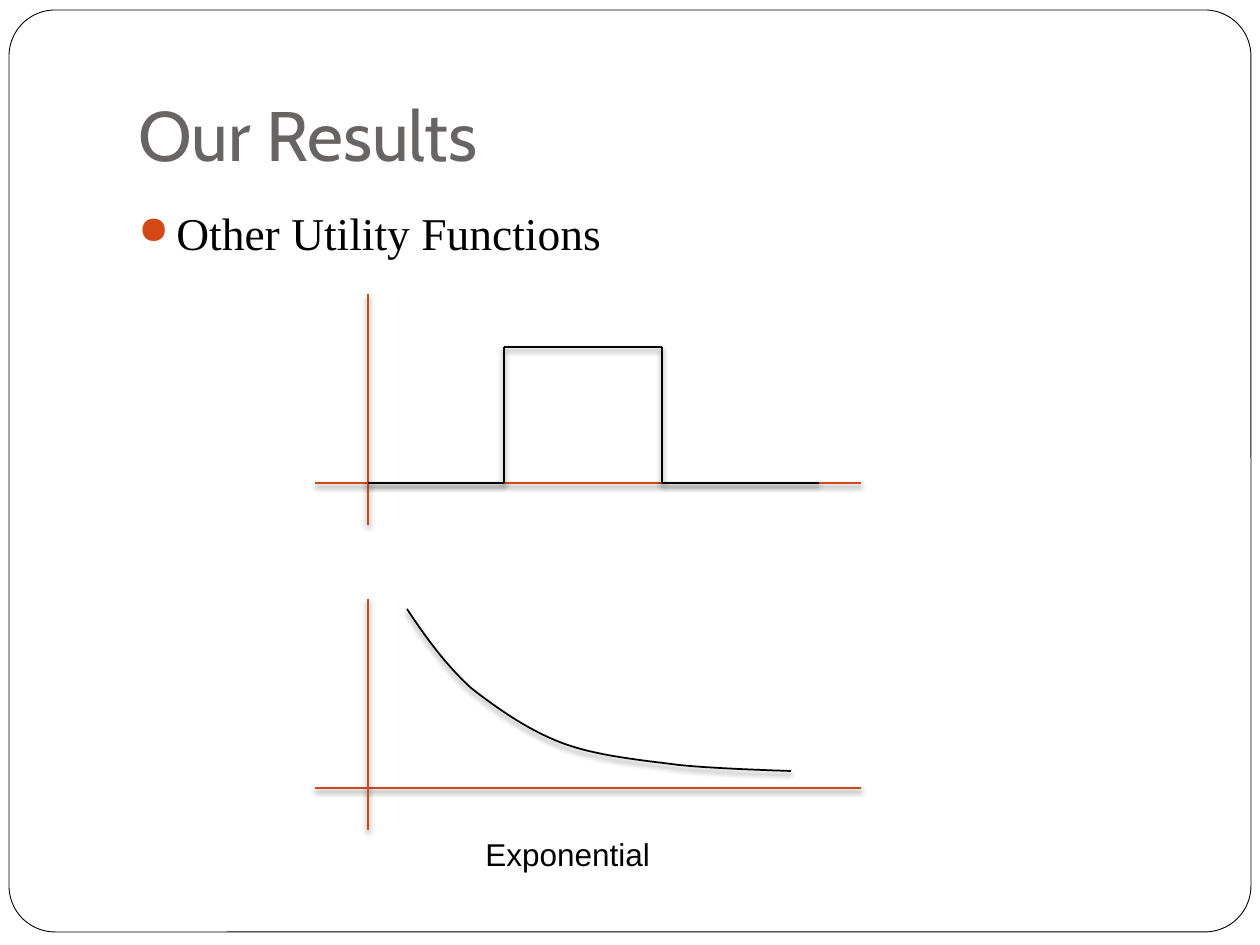
from lxml.etree import SubElement
from pptx import Presentation
from pptx.dml.color import RGBColor
from pptx.enum.shapes import MSO_CONNECTOR, MSO_SHAPE
from pptx.enum.text import MSO_ANCHOR
from pptx.oxml.ns import qn
from pptx.util import Emu, Pt

PX_PER_INCH = 126
BLACK, WHITE, GREY, ORANGE = "000000", "FFFFFF", "696464", "D34817"
STEP_PULSE = [(368, 483), (504, 483), (504, 347), (662, 347), (662, 483), (819, 483)]
DECAY_START = (407, 609)
DECAY_CURVES = [
    [(426, 638), (446, 665), (471, 688)],
    [(498, 709), (528, 730), (562, 743)],
    [(597, 756), (640, 760), (679, 765)],
    [(717, 769), (791, 771), (791, 771)],
]


def px(length):
    """Turn pixels into EMU."""
    return Emu(round(length * 914400 / PX_PER_INCH))


def color(hex_code):
    """Turn a hex string into a colour."""
    return RGBColor.from_string(hex_code)


def style_line(shape, hex_code, width=1):
    """Set the colour and width of an outline."""
    shape.line.color.rgb = color(hex_code)
    shape.line.width = Pt(width)


def add_shadow(shape):
    """Give a line a soft shadow straight below it."""
    effects = SubElement(shape._element.spPr, qn("a:effectLst"))
    shadow = SubElement(effects, qn("a:outerShdw"), blurRad=str(Pt(3)),
                        dist=str(Pt(2)), dir="5400000", rotWithShape="0")
    tint = SubElement(shadow, qn("a:srgbClr"), val=BLACK)
    SubElement(tint, qn("a:alpha"), val="50000")


def add_frame(page):
    """Draw the rounded border of the page."""
    frame = page.shapes.add_shape(MSO_SHAPE.ROUNDED_RECTANGLE, px(9), px(10), px(1242), px(922))
    frame.adjustments[0] = 0.05
    frame.shadow.inherit = False
    frame.fill.solid()
    frame.fill.fore_color.rgb = color(WHITE)
    style_line(frame, BLACK, 0.5)


def add_text(page, text, bounds, font, size, hex_code, anchor=MSO_ANCHOR.TOP):
    """Add a one-paragraph text box and return its paragraph."""
    box = page.shapes.add_textbox(*map(px, bounds))
    frame = box.text_frame
    frame.word_wrap = True
    frame.vertical_anchor = anchor
    para = frame.paragraphs[0]
    para.text = text
    para.font.name = font
    para.font.size = Pt(size)
    para.font.color.rgb = color(hex_code)
    return para


def add_bullet(para):
    """Put an orange bullet with a hanging indent on a paragraph."""
    para.space_before = Pt(5.8)
    properties = para._p.get_or_add_pPr()
    indent = px(38)
    properties.set("marL", str(indent))
    properties.set("indent", str(-indent))
    bullet_color = SubElement(properties, qn("a:buClr"))
    SubElement(bullet_color, qn("a:srgbClr"), val=ORANGE)
    SubElement(properties, qn("a:buSzPct"), val="85000")
    SubElement(properties, qn("a:buChar"), char="●")
    properties.append(properties.find(qn("a:defRPr")))


def add_line(page, start, end, hex_code):
    """Draw a straight shadowed line between two points."""
    line = page.shapes.add_connector(MSO_CONNECTOR.STRAIGHT, *map(px, start + end))
    style_line(line, hex_code)
    add_shadow(line)


def add_axes(page, top):
    """Draw a pair of crossing axes."""
    add_line(page, (315, top + 189), (861, top + 189), ORANGE)
    add_line(page, (368, top), (368, top + 231), ORANGE)


def bezier_points(start, curves, steps=16):
    """Sample the points of a chain of cubic curves."""
    points = []
    for first, second, end in curves:
        for step in range(1, steps + 1):
            t = step / steps
            weights = ((1 - t) ** 3, 3 * t * (1 - t) ** 2, 3 * t ** 2 * (1 - t), t ** 3)
            corners = (start, first, second, end)
            points.append(tuple(px(sum(w * corner[axis] for w, corner in zip(weights, corners)))
                                for axis in (0, 1)))
        start = end
    return points


def add_curve(page, start, curves):
    """Draw an open shadowed curve."""
    builder = page.shapes.build_freeform(*map(px, start))
    builder.add_line_segments(bezier_points(start, curves), close=False)
    curve = builder.convert_to_shape()
    curve.fill.background()
    style_line(curve, BLACK)
    add_shadow(curve)


def main():
    """Build the slide and save it."""
    deck = Presentation()
    deck.slide_width, deck.slide_height = px(1260), px(945)
    page = deck.slides.add_slide(deck.slide_layouts[6])
    add_frame(page)
    title = add_text(page, "Our Results", (126, 38, 1071, 151), "Cabin", 40, GREY, MSO_ANCHOR.BOTTOM)
    title._p.getparent().bodyPr.set("bIns", str(px(13)))
    add_bullet(add_text(page, "Other Utility Functions", (126, 199, 1071, 630),
                        "Times New Roman", 26, BLACK))
    add_axes(page, 294)
    for start, end in zip(STEP_PULSE, STEP_PULSE[1:]):
        add_line(page, start, end, BLACK)
    add_axes(page, 599)
    add_curve(page, DECAY_START, DECAY_CURVES)
    add_text(page, "Exponential", (473, 829, 262, 50), "Arial", 18, BLACK)
    deck.save("out.pptx")


if __name__ == "__main__":
    main()
